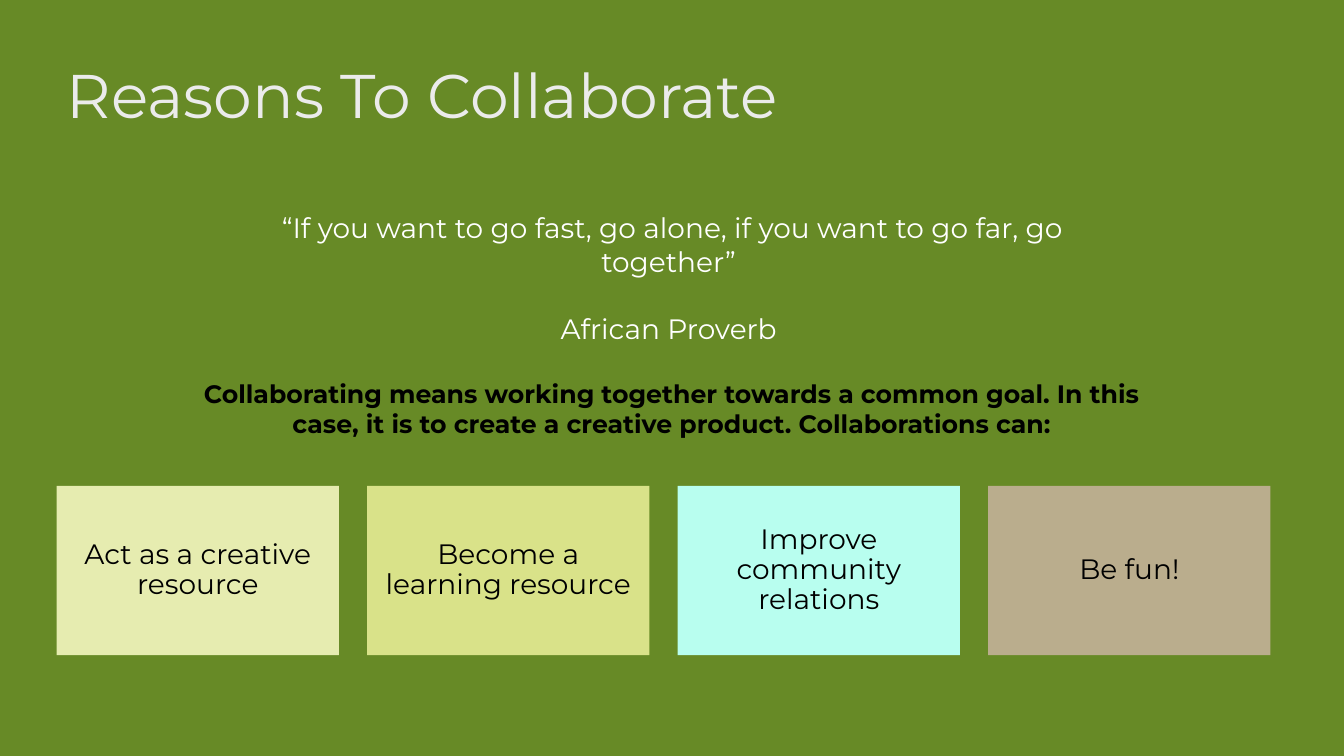
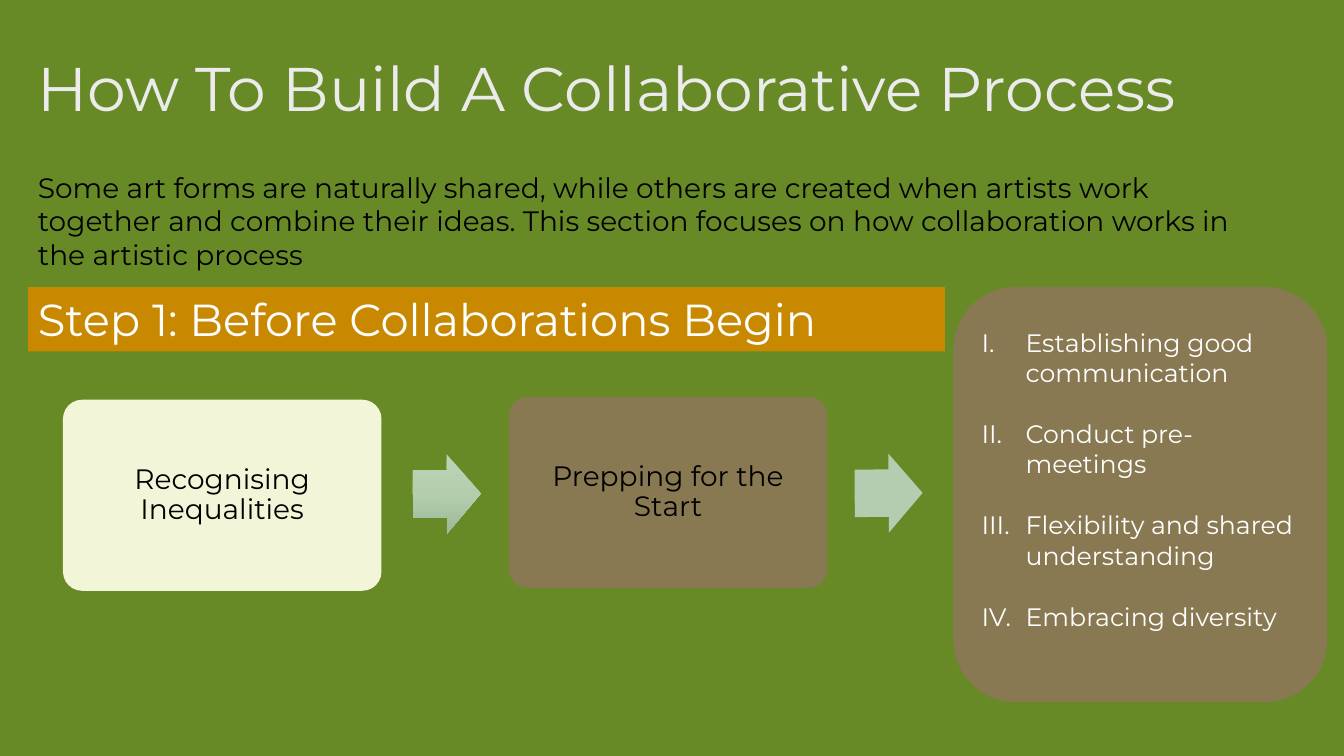
from copy import deepcopy
from dataclasses import dataclass

from lxml import etree
from pptx import Presentation
from pptx.dml.color import RGBColor
from pptx.enum.shapes import MSO_SHAPE
from pptx.enum.text import MSO_ANCHOR, PP_ALIGN
from pptx.oxml.ns import qn
from pptx.util import Pt

RECT = MSO_SHAPE.RECTANGLE
ROUND = MSO_SHAPE.ROUNDED_RECTANGLE
ARROW = MSO_SHAPE.RIGHT_ARROW
TOP, MIDDLE = MSO_ANCHOR.TOP, MSO_ANCHOR.MIDDLE
LEFT, CENTER = PP_ALIGN.LEFT, PP_ALIGN.CENTER


@dataclass(frozen=True)
class Theme:
    font: str = "Montserrat"
    ground: str = "678A26"
    title: str = "EBEBEB"
    white: str = "FFFFFF"
    black: str = "000000"
    cream: str = "F2F5D8"
    brown: str = "887952"
    orange: str = "C88800"
    sage: str = "B4CCAF"
    fade: tuple = ("BDD3B9", "B3CEAD", "9DB998")
    cards: tuple = ("E6ECB0", "D9E289", "B8FEEF", "BAAD8D")
    head: int = 44
    step: int = 32
    body: int = 20
    small: int = 18


THEME = Theme()


def shade(code):
    return RGBColor.from_string(code)


def write(frame, text, size=THEME.body, color=THEME.black, bold=False,
          align=LEFT, anchor=TOP, line=None, gap=0, inset=None, base=None,
          roman=False):
    frame.word_wrap = True
    frame.vertical_anchor = anchor
    if inset is not None:
        frame.margin_left = frame.margin_right = Pt(inset)
        frame.margin_top = frame.margin_bottom = Pt(inset)
    if base is not None:
        frame.margin_bottom = Pt(base)
    for i, part in enumerate(text.split("\n")):
        para = frame.paragraphs[0] if i == 0 else frame.add_paragraph()
        para.alignment = align
        para.line_spacing = line
        if i:
            para.space_before = Pt(gap)
        if roman:
            props = para._p.get_or_add_pPr()
            props.set("marL", str(Pt(31.5)))
            props.set("indent", str(-Pt(31.5)))
            mark = etree.SubElement(props, qn("a:buAutoNum"))
            mark.set("type", "romanUcPeriod")
        run = para.add_run()
        run.text = part
        run.font.name = THEME.font
        run.font.size = Pt(size)
        run.font.bold = bold
        run.font.color.rgb = shade(color)


class Deck:
    def __init__(self, theme):
        self.theme = theme
        self.show = Presentation()
        self.show.slide_width, self.show.slide_height = Pt(960), Pt(540)
        self.slide = None

    def page(self, title, x, y, w):
        self.slide = self.show.slides.add_slide(self.show.slide_layouts[6])
        fill = self.slide.background.fill
        fill.solid()
        fill.fore_color.rgb = shade(self.theme.ground)
        self.text(title, x, y, w, 104.4, size=self.theme.head,
                  color=self.theme.title, anchor=MIDDLE, line=0.9)

    def text(self, text, x, y, w, h, **style):
        box = self.slide.shapes.add_textbox(Pt(x), Pt(y), Pt(w), Pt(h))
        write(box.text_frame, text, **style)

    def shape(self, kind, x, y, w, h, fill, *adjust):
        item = self.slide.shapes.add_shape(kind, Pt(x), Pt(y), Pt(w), Pt(h))
        item.shadow.inherit = False
        item.line.fill.background()
        for i, value in enumerate(adjust):
            item.adjustments[i] = value
        if isinstance(fill, tuple):
            self.blend(item, fill)
        else:
            item.fill.solid()
            item.fill.fore_color.rgb = shade(fill)
        return item

    def blend(self, item, colors):
        item.fill.gradient()
        item.fill.gradient_angle = 270
        stops = item._element.spPr.find(".//" + qn("a:gsLst"))
        stops.insert(1, deepcopy(stops[0]))
        for i, stop in enumerate(item.fill.gradient_stops):
            stop.position = i / (len(colors) - 1)
            stop.color.rgb = shade(colors[i])

    def card(self, text, kind, x, y, w, h, fill, *adjust):
        item = self.shape(kind, x, y, w, h, fill, *adjust)
        write(item.text_frame, text, align=CENTER, anchor=MIDDLE,
              line=0.9, inset=6)

    def arrow(self, x, y, fill):
        item = self.shape(ARROW, x, y, 48.5, 56.5, fill, 0.6, 0.5)
        item.rotation = 359.6

    def band(self, text, x, y, w, h, fill):
        item = self.shape(RECT, x, y, w, h, fill)
        write(item.text_frame, text, size=self.theme.step,
              color=self.theme.white)

    def panel(self, text, x, y, w, h, fill):
        item = self.shape(ROUND, x, y, w, h, fill)
        write(item.text_frame, text, size=self.theme.small,
              color=self.theme.white, anchor=MIDDLE, gap=22, base=25.5,
              roman=True)


def reasons(deck):
    theme = deck.theme
    deck.page("Reasons To Collaborate", 40.5, 18.5, 828)
    deck.text("“If you want to go fast, go alone, if you want to go far, go "
              "together” \nAfrican Proverb ", 183, 147, 594.5, 104.5,
              color=theme.white, align=CENTER, gap=24)
    deck.text("Collaborating means working together towards a common goal. "
              "In this case, it is to create a creative product. "
              "Collaborations can:", 123, 266.5, 713.5, 51,
              size=theme.small, bold=True, align=CENTER)
    gains = ("Act as a creative resource", "Become a learning resource",
             "Improve community relations", "Be fun!")
    for i, (gain, fill) in enumerate(zip(gains, theme.cards)):
        deck.card(gain, RECT, 40.5 + i * 221.8, 347, 201.6, 121, fill)


def process(deck):
    theme = deck.theme
    deck.page("How To Build A Collaborative Process", 20, 13.5, 897)
    deck.text("Some art forms are naturally shared, while others are created "
              "when artists work together and combine their ideas. This "
              "section focuses on how collaboration works in the artistic "
              "process", 20, 118, 878.5, 80)
    deck.band("Step 1: Before Collaborations Begin", 20, 205, 655, 46,
              theme.orange)
    stages = (("Recognising Inequalities", 45, 285.5, theme.cream),
              ("Prepping for the Start", 363.5, 283.5, theme.brown))
    for text, x, y, fill in stages:
        deck.card(text, ROUND, x, y, 227.5, 136.5, fill, 0.1)
    deck.arrow(295, 324.5, theme.fade)
    deck.arrow(610.5, 324, theme.sage)
    deck.panel("Establishing good communication\nConduct pre-meetings\n"
               "Flexibility and shared understanding\nEmbracing diversity",
               681, 205, 267, 296.5, theme.brown)


def main():
    deck = Deck(THEME)
    reasons(deck)
    process(deck)
    deck.show.save("out.pptx")


if __name__ == "__main__":
    main()
